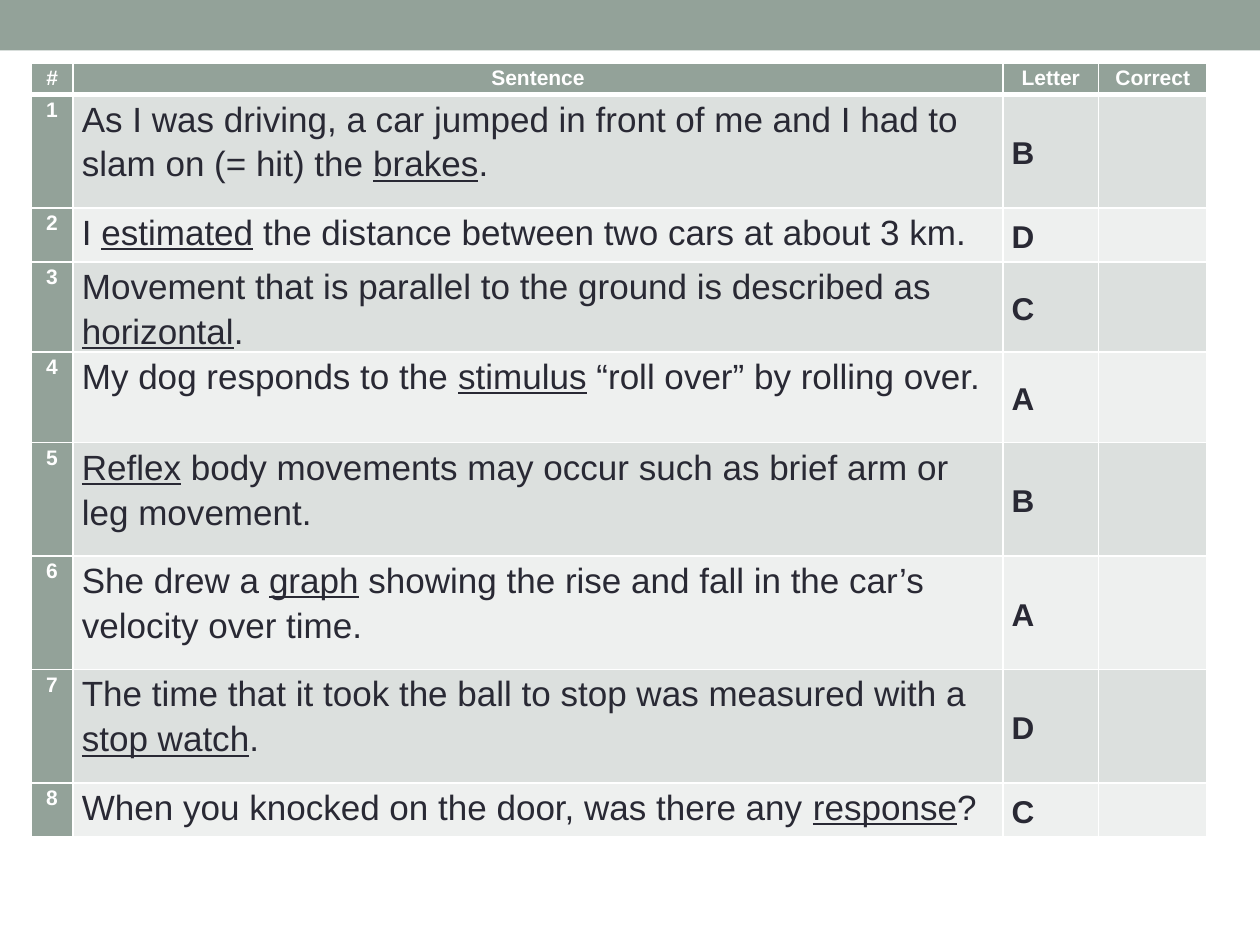
from lxml.etree import SubElement
from pptx import Presentation
from pptx.dml.color import RGBColor
from pptx.enum.shapes import MSO_SHAPE
from pptx.enum.text import MSO_ANCHOR, PP_ALIGN
from pptx.oxml import parse_xml
from pptx.oxml.ns import nsdecls, qn
from pptx.util import Inches, Pt

SAGE = RGBColor(0x93, 0xA2, 0x99)
BANDS = RGBColor(0xDC, 0xE0, 0xDE), RGBColor(0xEE, 0xF0, 0xEF)
INK = RGBColor(0x29, 0x29, 0x34)
WHITE = RGBColor(0xFF, 0xFF, 0xFF)

HEADS = ["#", "Sentence", "Letter", "Correct"]
WIDTHS = [0.33, 7.38, 0.76, 0.86]
HEAD_H = 0.25

# Row height, text before, underlined word, text after, answer letter
ROWS = [
    (0.9, "As I was driving, a car jumped in front of me and I had to "
          "slam on (= hit) the ", "brakes", ".", "B"),
    (0.43, "I ", "estimated", " the distance between two cars at about 3 km.", "D"),
    (0.43, "Movement that is parallel to the ground is described as ",
     "horizontal", ".", "C"),
    (0.72, "My dog responds to the ", "stimulus", " “roll over” by rolling over.", "A"),
    (0.9, "", "Reflex", " body movements may occur such as brief arm or "
          "leg movement.", "B"),
    (0.9, "She drew a ", "graph", " showing the rise and fall in the car’s "
          "velocity over time.", "A"),
    (0.9, "The time that it took the ball to stop was measured with a ",
     "stop watch", ".", "D"),
    (0.43, "When you knocked on the door, was there any ", "response", "?", "C"),
]


def paint(cell, color, top=1, bottom=1):
    """Fill a cell and give it white borders."""
    cell.fill.solid()
    cell.fill.fore_color.rgb = color
    props = cell._tc.get_or_add_tcPr()
    for i, (side, width) in enumerate(zip("LRTB", (1, 1, top, bottom))):
        line = parse_xml(f'<a:ln{side} {nsdecls("a")} w="{Pt(width)}"/>')
        fill = SubElement(line, qn("a:solidFill"))
        SubElement(fill, qn("a:srgbClr"), val=str(WHITE))
        props.insert(i, line)


def write(cell, parts, size, color, bold, align=None, gap=None):
    """Write (text, underlined) parts as one paragraph."""
    cell.margin_left = cell.margin_right = Inches(0.07)
    cell.margin_top = cell.margin_bottom = 0
    para = cell.text_frame.paragraphs[0]
    para.line_spacing = 1.15
    para.alignment = align
    if gap is not None:
        para.space_before = para.space_after = Pt(gap)
    font = para.font
    font.name, font.size, font.bold = "Arial", Pt(size), bold
    font.color.rgb = color
    for text, under in parts:
        if text:
            run = para.add_run()
            run.text = text
            if under:
                run.font.underline = True


deck = Presentation()
deck.slide_width, deck.slide_height = Inches(10), Inches(7.5)
slide = deck.slides.add_slide(deck.slide_layouts[6])

# Top band
band = slide.shapes.add_shape(MSO_SHAPE.RECTANGLE, 0, 0, Inches(10), Inches(0.4))
band.shadow.inherit = False
band.fill.solid()
band.fill.fore_color.rgb = SAGE
band.line.fill.background()

# Table grid
heights = [HEAD_H] + [row[0] for row in ROWS]
table = slide.shapes.add_table(
    len(heights), len(WIDTHS), Inches(0.25), Inches(0.5),
    Inches(sum(WIDTHS)), Inches(sum(heights))).table
table.first_row = table.horz_banding = False
for col, width in zip(table.columns, WIDTHS):
    col.width = Inches(width)
for row, height in zip(table.rows, heights):
    row.height = Inches(height)

# Header row
for c, head in enumerate(HEADS):
    cell = table.cell(0, c)
    write(cell, [(head, False)], 12, WHITE, True, PP_ALIGN.CENTER, 6)
    paint(cell, SAGE, bottom=3)

# Sentence rows
for r, (_, before, word, after, letter) in enumerate(ROWS, 1):
    num, text, answer, check = table.rows[r].cells
    write(num, [(f" {r}", False)], 12, WHITE, True, PP_ALIGN.JUSTIFY, 6)
    write(text, [(before, False), (word, True), (after, False)], 20, INK, False)
    write(answer, [(letter, False)], 18, INK, True)
    answer.vertical_anchor = MSO_ANCHOR.MIDDLE
    top = 3 if r == 1 else 1
    paint(num, SAGE, top)
    for cell in (text, answer, check):
        paint(cell, BANDS[(r - 1) % 2], top)

deck.save("out.pptx")
